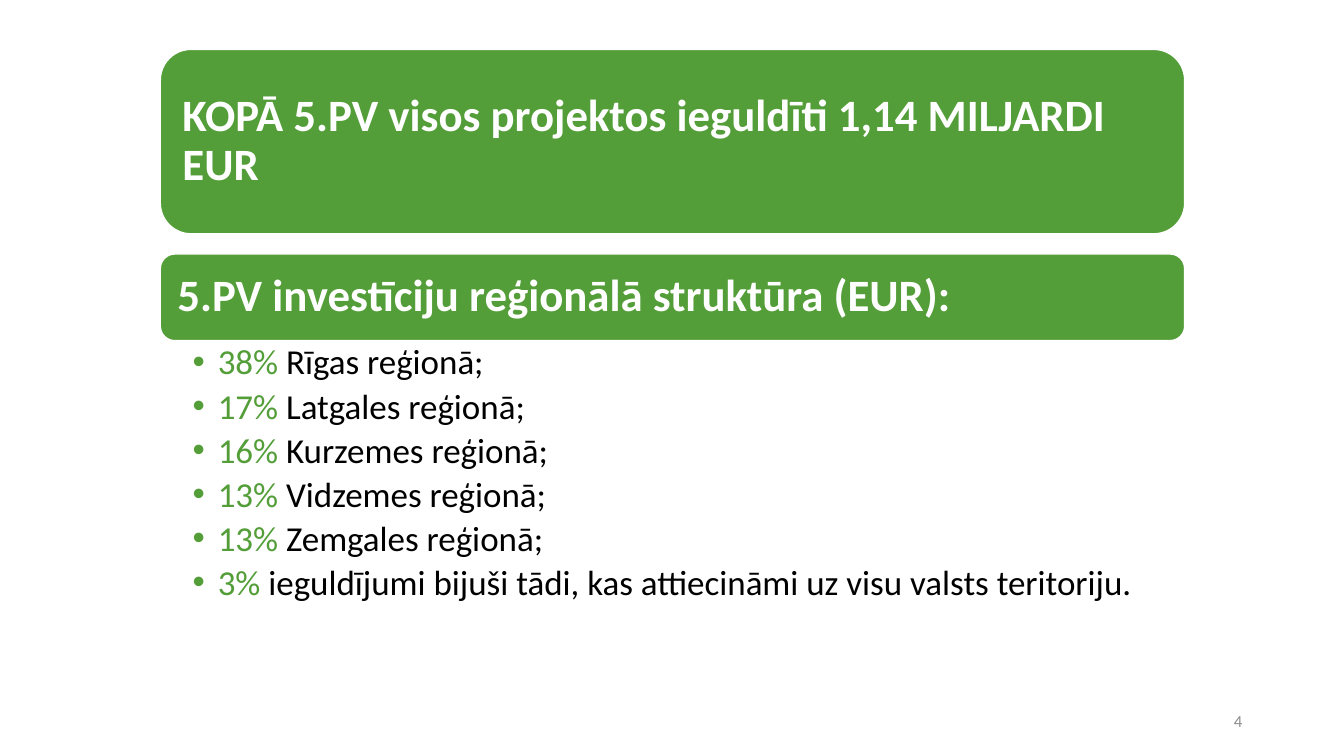
"""Build the slide on regional investment structure."""
from dataclasses import dataclass

from lxml import etree
from pptx import Presentation
from pptx.dml.color import RGBColor
from pptx.enum.shapes import MSO_SHAPE
from pptx.enum.text import MSO_ANCHOR, MSO_AUTO_SIZE, PP_ALIGN
from pptx.oxml.ns import qn
from pptx.util import Inches, Pt

ROUNDED = MSO_SHAPE.ROUNDED_RECTANGLE
TOP, MIDDLE = MSO_ANCHOR.TOP, MSO_ANCHOR.MIDDLE
LEFT, RIGHT = PP_ALIGN.LEFT, PP_ALIGN.RIGHT
NO_FIT = MSO_AUTO_SIZE.NONE
GREEN, WHITE, BLACK, GREY = "549E39", "FFFFFF", "000000", "8C8C8C"
FONT = "Calibri"
COLUMN_LEFT, COLUMN_WIDTH = 1.59, 10.16


@dataclass
class Banner:
    text: str
    top: float
    height: float
    inset: float
    is_title: bool = False


@dataclass
class Share:
    percent: str
    target: str


BANNERS = [
    Banner("KOPĀ 5.PV visos projektos ieguldīti 1,14 MILJARDI EUR", 0.49, 1.83, 0.09, True),
    Banner("5.PV investīciju reģionālā struktūra (EUR):", 2.52, 0.86, 0.04),
]
SHARES = [
    Share("38%", "Rīgas reģionā;"),
    Share("17%", "Latgales reģionā;"),
    Share("16%", "Kurzemes reģionā;"),
    Share("13%", "Vidzemes reģionā;"),
    Share("13%", "Zemgales reģionā;"),
    Share("3%", "ieguldījumi bijuši tādi, kas attiecināmi uz visu valsts teritoriju."),
]


def color(value: str) -> RGBColor:
    """Turn a hex string into a colour."""
    return RGBColor.from_string(value)


def apply(target, formats: dict) -> None:
    """Set each attribute named in the format values."""
    for name, value in formats.items():
        setattr(target, name, value)


def place(box, left: float, top: float, width: float, height: float) -> None:
    """Position a box, with lengths in inches."""
    sides = {"left": left, "top": top, "width": width, "height": height}
    apply(box, {name: Inches(value) for name, value in sides.items()})


def format_frame(box, anchor, insets: tuple) -> None:
    """Set wrapping, anchor and the left, top, right and bottom insets."""
    names = ("margin_left", "margin_top", "margin_right", "margin_bottom")
    margins = {name: Inches(value) for name, value in zip(names, insets)}
    apply(box.text_frame, {"word_wrap": True, "auto_size": NO_FIT,
                           "vertical_anchor": anchor, **margins})


def add_span(para, text: str, size: float, tint: str, bold: bool = False) -> None:
    """Add a formatted run to a paragraph."""
    span = para.add_run()
    span.text = text
    apply(span.font, {"name": FONT, "size": Pt(size), "bold": bold})
    span.font.color.rgb = color(tint)


def add_banner(page, banner: Banner) -> None:
    """Draw a green banner with its heading above it."""
    shape = page.shapes.add_shape(ROUNDED, 0, 0, 0, 0)
    place(shape, COLUMN_LEFT, banner.top, COLUMN_WIDTH, banner.height)
    shape.shadow.inherit = False
    shape.fill.solid()
    shape.fill.fore_color.rgb = color(GREEN)
    shape.line.color.rgb = color(WHITE)
    shape.line.width = Pt(1)

    if banner.is_title:
        box = page.shapes.title
        shape._element.addnext(box._element)
    else:
        box = page.shapes.add_textbox(0, 0, 0, 0)
    inset = banner.inset
    place(box, COLUMN_LEFT + inset, banner.top + inset,
          COLUMN_WIDTH - 2 * inset, banner.height - 2 * inset)
    format_frame(box, MIDDLE, (0.13,) * 4)
    para = box.text_frame.paragraphs[0]
    apply(para, {"alignment": LEFT, "line_spacing": 0.9, "space_before": Pt(0)})
    add_span(para, banner.text, 32, WHITE, True)


def add_bullet(para) -> None:
    """Give a paragraph a green bullet with a hanging indent."""
    properties = para._p.get_or_add_pPr()
    properties.set("marL", str(Inches(0.25)))
    properties.set("indent", str(Inches(-0.25)))
    tint = etree.SubElement(properties, qn("a:buClr"))
    etree.SubElement(tint, qn("a:srgbClr"), val=GREEN)
    etree.SubElement(properties, qn("a:buFont"), typeface="Arial")
    etree.SubElement(properties, qn("a:buChar"), char="•")


def add_shares(page, shares: list[Share]) -> None:
    """List the share of each region."""
    box = page.shapes.add_textbox(0, 0, 0, 0)
    place(box, COLUMN_LEFT, 3.38, COLUMN_WIDTH, 3.63)
    format_frame(box, TOP, (0.32, 0.04, 0.25, 0.04))
    frame = box.text_frame
    for index, share in enumerate(shares):
        para = frame.add_paragraph() if index else frame.paragraphs[0]
        apply(para, {"line_spacing": 0.9, "space_after": Pt(4.5)})
        add_bullet(para)
        add_span(para, f"{share.percent} ", 25, GREEN)
        add_span(para, share.target, 25, BLACK)


def add_page_number(page, number: str) -> None:
    """Write the page number at the lower right."""
    box = page.shapes.add_textbox(0, 0, 0, 0)
    place(box, 9.42, 6.95, 3, 0.4)
    format_frame(box, MIDDLE, (0.1, 0.05, 0.1, 0.05))
    para = box.text_frame.paragraphs[0]
    para.alignment = RIGHT
    add_span(para, number, 12, GREY)


def main() -> None:
    """Build and save the deck."""
    deck = Presentation()
    apply(deck, {"slide_width": Inches(13.33), "slide_height": Inches(7.5)})
    page = deck.slides.add_slide(deck.slide_layouts[5])
    add_page_number(page, "4")
    for banner in BANNERS:
        add_banner(page, banner)
    add_shares(page, SHARES)
    deck.save("out.pptx")


if __name__ == "__main__":
    main()
